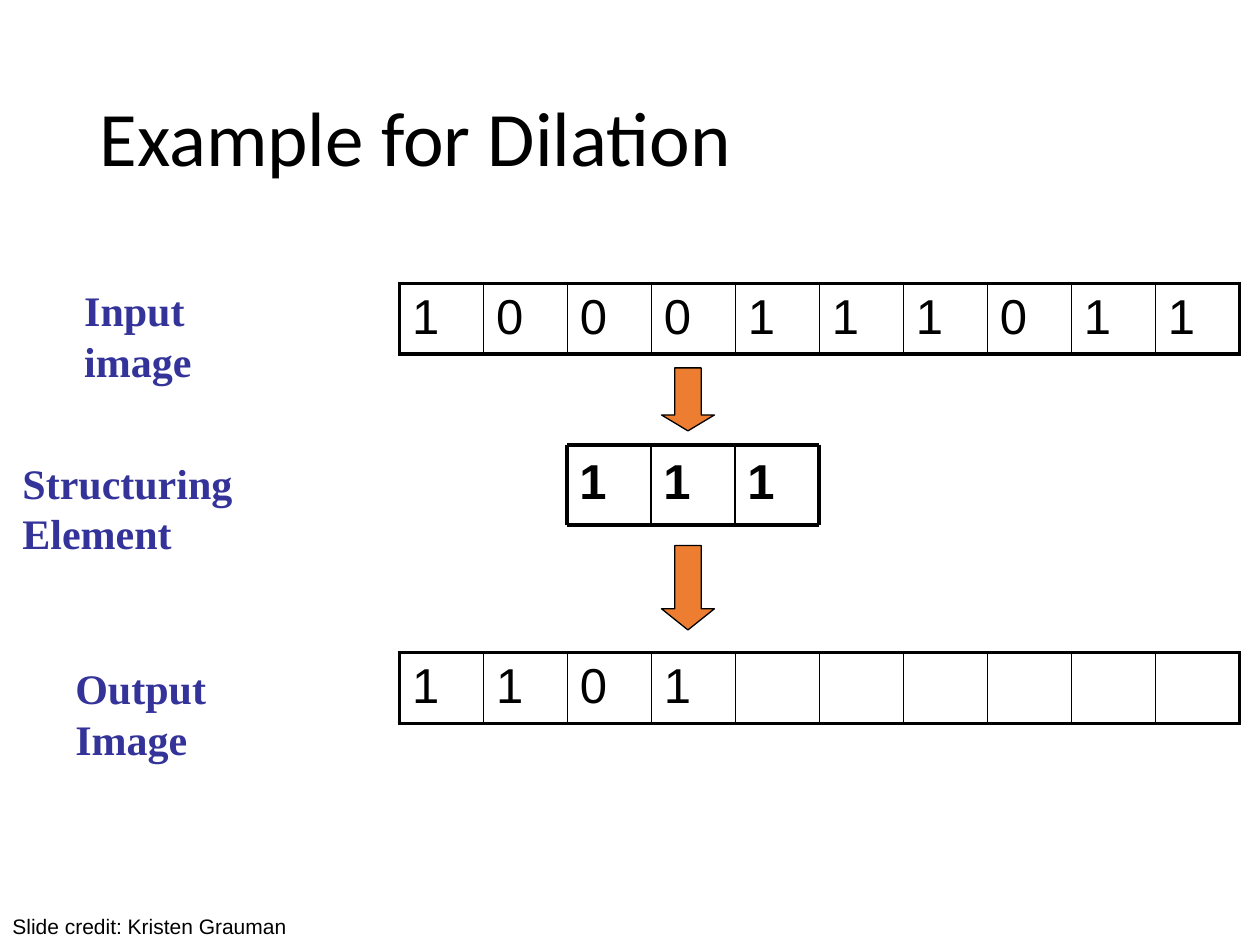
from lxml import etree
from pptx import Presentation
from pptx.dml.color import RGBColor
from pptx.enum.shapes import MSO_CONNECTOR, MSO_SHAPE
from pptx.enum.text import MSO_ANCHOR, PP_ALIGN
from pptx.oxml import parse_xml
from pptx.oxml.ns import nsdecls, qn
from pptx.util import Inches, Pt

STRAIGHT = MSO_CONNECTOR.STRAIGHT
DOWN_ARROW = MSO_SHAPE.DOWN_ARROW
MIDDLE = MSO_ANCHOR.MIDDLE
LEFT = PP_ALIGN.LEFT
THICK, THIN = 2.25, 1
CELL = 2 / 3


def color(value):
    return RGBColor.from_string(value)


def write(frame, text, size, name, tint="000000", bold=False):
    frame.word_wrap = True
    para = frame.paragraphs[0]
    para.text = text
    para.alignment = LEFT
    para.font.size = Pt(size)
    para.font.name = name
    para.font.bold = bold
    para.font.color.rgb = color(tint)
    return para


deck = Presentation()
deck.slide_width, deck.slide_height = Inches(10), Inches(7.5)
page = deck.slides.add_slide(deck.slide_layouts[5])

title = page.shapes.title
title.left, title.top = Inches(0.69), Inches(0.4)
title.width, title.height = Inches(8.62), Inches(1.45)
title.text_frame.vertical_anchor = MIDDLE
write(title.text_frame, "Example for Dilation", 44, "Calibri").line_spacing = 0.9

for top, values in [(2.25, "1000111011"), (5.18, "1101")]:
    frame = page.shapes.add_table(1, 10, Inches(3.17), Inches(top), Inches(10 * CELL), Inches(0.56))
    table = frame.table
    table.first_row = table.horz_banding = False
    table.rows[0].height = Inches(0.56)
    for index in range(10):
        table.columns[index].width = Inches(CELL)
        cell = table.cell(0, index)
        if index < len(values):
            write(cell.text_frame, values[index], 28, "Arial")
        properties = cell._tc.get_or_add_tcPr()
        widths = {
            "L": THICK if index == 0 else THIN,
            "R": THICK if index == 9 else THIN,
            "T": THICK,
            "B": THICK,
        }
        for side, width in widths.items():
            properties.append(parse_xml(
                f'<a:ln{side} {nsdecls("a")} w="{Pt(width)}"><a:solidFill>'
                f'<a:srgbClr val="000000"/></a:solidFill></a:ln{side}>'
            ))
        cell.fill.background()

labels = [
    ("Input image", 0.57, 2.21, 1.8),
    ("Structuring Element", 0.08, 3.58, 2.89),
    ("Output Image", 0.5, 5.21, 2.04),
]
for text, left, top, width in labels:
    box = page.shapes.add_textbox(Inches(left), Inches(top), Inches(width), Inches(0.5))
    write(box.text_frame, text, 24, "Times New Roman", "333399", True)

element_left, element_top, element_bottom = 4.5, 3.53, 4.17
element_right = element_left + 3 * CELL
for index in range(3):
    box = page.shapes.add_textbox(
        Inches(element_left + index * CELL), Inches(element_top),
        Inches(CELL), Inches(element_bottom - element_top),
    )
    write(box.text_frame, "1", 28, "Arial", bold=True)

edges = [(element_left, y, element_right, y, THICK) for y in (element_top, element_bottom)]
for index, width in enumerate([THICK, THIN, THIN, THICK]):
    x = element_left + index * CELL
    edges.append((x, element_top, x, element_bottom, width))
for x1, y1, x2, y2, width in edges:
    edge = page.shapes.add_connector(STRAIGHT, Inches(x1), Inches(y1), Inches(x2), Inches(y2))
    edge.line.color.rgb = color("000000")
    edge.line.width = Pt(width)
    etree.SubElement(edge._element.spPr, qn("a:effectLst"))

for top, height, head in [(4.33, 0.67, 0.4), (2.92, 0.5, 0.3)]:
    arrow = page.shapes.add_shape(DOWN_ARROW, Inches(5.25), Inches(top), Inches(0.42), Inches(height))
    arrow.adjustments[0] = 0.5
    arrow.adjustments[1] = head
    arrow.shadow.inherit = False
    arrow.fill.solid()
    arrow.fill.fore_color.rgb = color("ED7D31")
    arrow.line.color.rgb = color("000000")
    arrow.line.width = Pt(0.75)

credit = page.shapes.add_textbox(Inches(0), Inches(7.2), Inches(4.58), Inches(0.3))
write(credit.text_frame, "Slide credit: Kristen Grauman", 12, "Arial")

deck.save("out.pptx")
